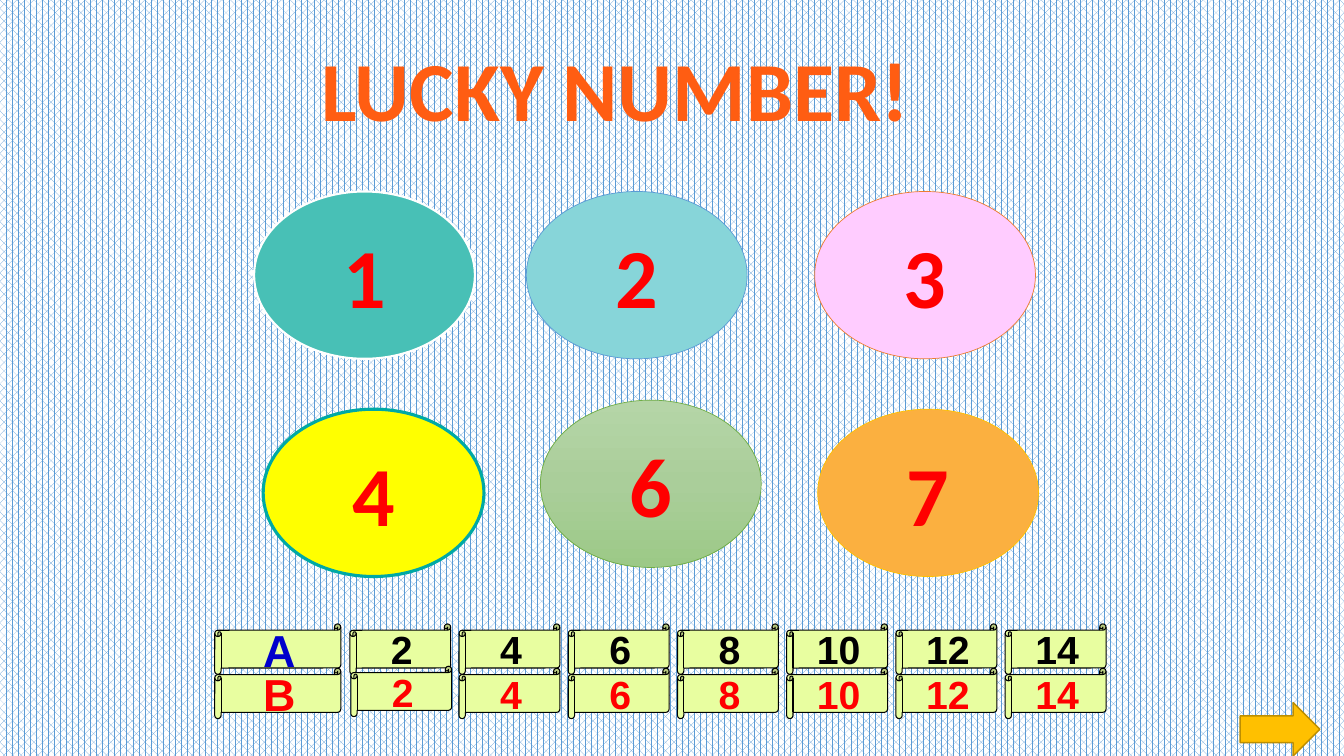
import copy

import pptx
import pptx.util
from pptx.dml.color import RGBColor
from pptx.enum.dml import MSO_PATTERN
from pptx.enum.shapes import MSO_SHAPE
from pptx.enum.text import MSO_ANCHOR, MSO_AUTO_SIZE, PP_ALIGN
from pptx.oxml.ns import qn

Inches = pptx.util.Inches
Pt = pptx.util.Pt

WHITE = RGBColor(0xFF, 0xFF, 0xFF)
BLACK = RGBColor(0x00, 0x00, 0x00)
RED = RGBColor(0xFF, 0x00, 0x00)
NAVY = RGBColor(0x00, 0x00, 0xCC)
BLUE = RGBColor(0x5B, 0x9B, 0xD5)
TEAL = RGBColor(0x48, 0xC0, 0xB6)
DARK_TEAL = RGBColor(0x00, 0xA9, 0xA5)
AQUA = RGBColor(0x87, 0xD5, 0xD9)
PINK = RGBColor(0xFF, 0xCC, 0xFF)
ORANGE = RGBColor(0xED, 0x7D, 0x31)
YELLOW = RGBColor(0xFF, 0xFF, 0x00)
GREEN = RGBColor(0x70, 0xAD, 0x47)
AMBER = RGBColor(0xFB, 0xB0, 0x40)
GOLD = RGBColor(0xFF, 0xC0, 0x00)
DARK_GOLD = RGBColor(0xBD, 0x8E, 0x00)
LIME = RGBColor(0xE8, 0xFE, 0xA0)

TITLE_STOPS = [(0, RGBColor(0xFF, 0xAC, 0x8E)),
               (0.75, RGBColor(0xFF, 0x5D, 0x12)),
               (1, RGBColor(0xD4, 0x56, 0x00))]
GREEN_STOPS = [(0, RGBColor(0xB5, 0xD5, 0xA7)),
               (0.5, RGBColor(0xAA, 0xCE, 0x9A)),
               (1, RGBColor(0x9C, 0xC9, 0x87))]

# number, left, top, fill, line colour, line width
OVALS = [
    ("1", 2.52, 1.9, TEAL, WHITE, 1.5),
    ("2", 5.22, 1.9, AQUA, BLUE, 0.5),
    ("3", 8.08, 1.9, PINK, ORANGE, 0.5),
    ("4", 2.61, 4.06, YELLOW, DARK_TEAL, 2.25),
    ("6", 5.36, 3.97, GREEN_STOPS, GREEN, 0.5),
    ("7", 8.11, 4.06, AMBER, GOLD, 0.5),
]
# team, top, team colour, score colour, left and top of the first score
SCORE_ROWS = [
    ("A", 6.19, NAVY, BLACK, 3.47, 6.19),
    ("B", 6.63, RED, RED, 3.48, 6.61),
]
SCORES = range(2, 15, 2)
SCORE_LEFT = 3.47
SCORE_STEP = 6.5 / 6


def set_fill(sp, fill, paint):
    """Fill with a colour, or with a top-down gradient of three stops."""
    if isinstance(paint, RGBColor):
        fill.solid()
        fill.fore_color.rgb = paint
        return
    fill.gradient()
    fill.gradient_angle = 270
    stop_list = next(sp.element.iter(qn("a:gsLst")))
    stop_list.append(copy.deepcopy(stop_list[0]))
    for stop, (position, color) in zip(fill.gradient_stops, paint):
        stop.position = position
        stop.color.rgb = color


def add_text(sp, text, size, font, paint):
    p = sp.text_frame.paragraphs[0]
    r = p.add_run()
    r.text = text
    r.font.name = font
    r.font.size = Pt(size)
    r.font.bold = True
    set_fill(sp, r.font.fill, paint)
    return p


def add_shape(s, kind, box, paint, line, width):
    sp = s.shapes.add_shape(kind, *map(Inches, box))
    sp.shadow.inherit = False
    set_fill(sp, sp.fill, paint)
    sp.line.color.rgb = line
    sp.line.width = Pt(width)
    return sp


def add_label(sp, text, size, font, color):
    sp.text_frame.vertical_anchor = MSO_ANCHOR.MIDDLE
    add_text(sp, text, size, font, color).alignment = PP_ALIGN.CENTER


def add_title(s):
    sp = s.shapes.add_textbox(Inches(3.09), Inches(0.32), Inches(8.04), Inches(0.93))
    sp.text_frame.word_wrap = True
    sp.text_frame.auto_size = MSO_AUTO_SIZE.SHAPE_TO_FIT_TEXT
    add_text(sp, "LUCKY NUMBER!", 60, "Calibri", TITLE_STOPS)


def add_oval(s, number, left, top, paint, line, width):
    sp = add_shape(s, MSO_SHAPE.OVAL, (left, top, 2.19, 1.66), paint, line, width)
    add_label(sp, number, 60, "Calibri", RED)


def add_scroll(s, text, left, top, width, size, color):
    box = (left, top, width, 0.5)
    sp = add_shape(s, MSO_SHAPE.HORIZONTAL_SCROLL, box, LIME, BLACK, 0.75)
    sp.text_frame.word_wrap = False
    add_label(sp, text, size, "Arial", color)


def add_score_row(s, team, top, team_color, score_color, first_left, first_top):
    add_scroll(s, team, 2.13, top, 1.25, 32, team_color)
    for i, score in enumerate(SCORES):
        left = SCORE_LEFT + i * SCORE_STEP if i else first_left
        score_top = top if i else first_top
        add_scroll(s, str(score), left, score_top, 1, 28, score_color)


def main():
    prs = pptx.Presentation()
    prs.slide_width = Inches(13.33)
    prs.slide_height = Inches(7.5)
    s = prs.slides.add_slide(prs.slide_layouts[6])
    backdrop = s.background.fill
    backdrop.patterned()
    backdrop.pattern = MSO_PATTERN.PERCENT_60
    backdrop.fore_color.rgb = BLUE
    backdrop.back_color.rgb = WHITE

    add_title(s)
    for oval in OVALS:
        add_oval(s, *oval)
    for row in SCORE_ROWS:
        add_score_row(s, *row)
    add_shape(s, MSO_SHAPE.RIGHT_ARROW, (12.3, 6.97, 0.79, 0.53), GOLD, DARK_GOLD, 1)
    prs.save("out.pptx")


if __name__ == "__main__":
    main()
